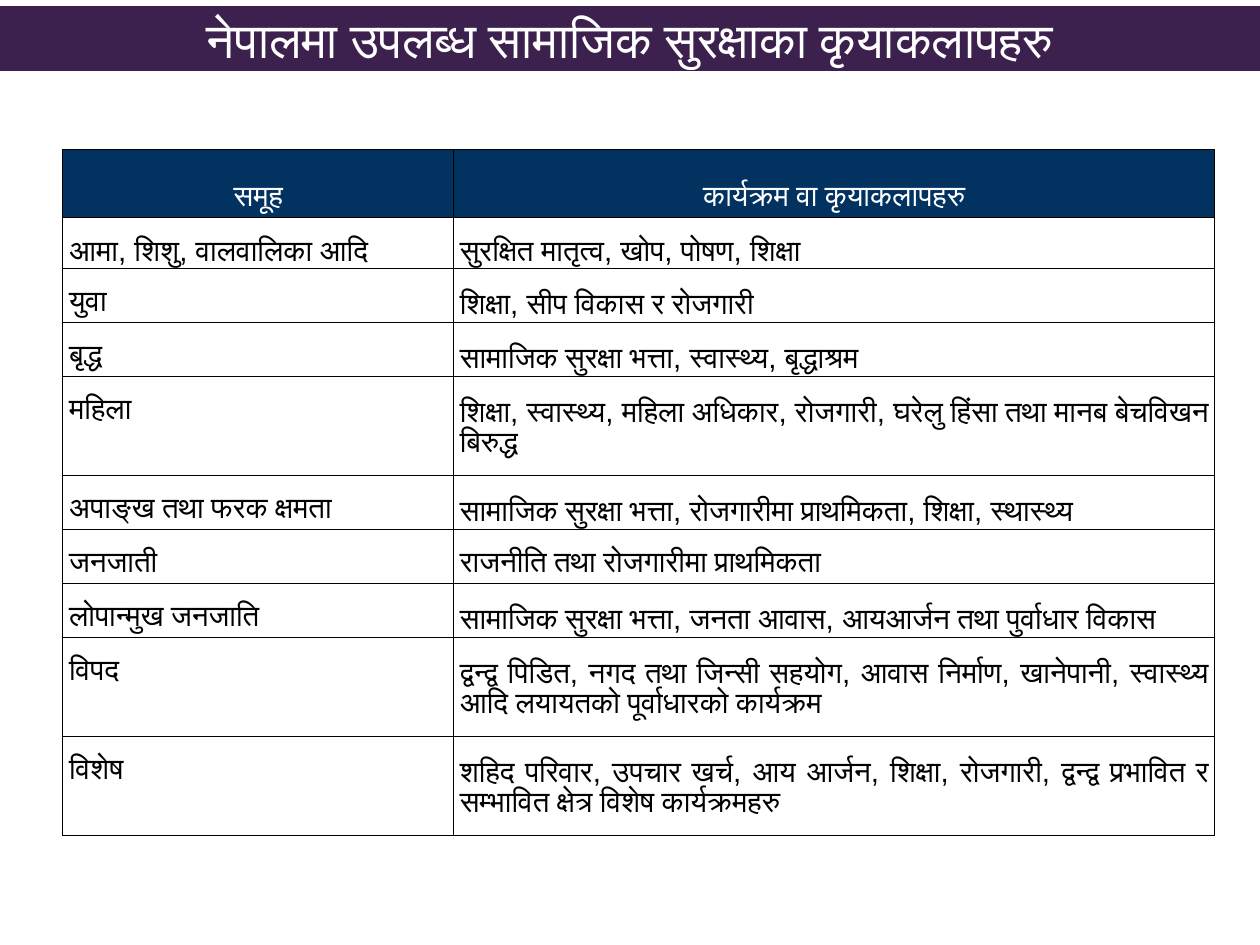
from pptx import Presentation
from pptx.dml.color import RGBColor
from pptx.enum.shapes import MSO_SHAPE
from pptx.enum.text import MSO_ANCHOR, PP_ALIGN
from pptx.oxml import parse_xml
from pptx.oxml.ns import nsdecls
from pptx.util import Inches, Pt

TITLE = "नेपालमा उपलब्ध सामाजिक सुरक्षाका कृयाकलापहरु"
HEADER = ("समूह", "कार्यक्रम वा कृयाकलापहरु")
PROGRAMS = [
    ("आमा, शिशु, वालवालिका आदि", "सुरक्षित मातृत्व, खोप, पोषण, शिक्षा"),
    ("युवा", "शिक्षा, सीप विकास र रोजगारी"),
    ("बृद्ध", "सामाजिक सुरक्षा भत्ता, स्वास्थ्य, बृद्धाश्रम"),
    ("महिला", "शिक्षा, स्वास्थ्य, महिला अधिकार, रोजगारी, घरेलु हिंसा तथा मानब बेचविखन बिरुद्ध"),
    ("अपाङ्ख तथा फरक क्षमता", "सामाजिक सुरक्षा भत्ता, रोजगारीमा प्राथमिकता, शिक्षा, स्थास्थ्य"),
    ("जनजाती", "राजनीति तथा रोजगारीमा प्राथमिकता"),
    ("लोपान्मुख जनजाति", "सामाजिक सुरक्षा भत्ता, जनता आवास, आयआर्जन तथा पुर्वाधार विकास"),
    ("विपद", "द्वन्द्व पिडित, नगद तथा जिन्सी सहयोग, आवास निर्माण, खानेपानी, स्वास्थ्य आदि लयायतको पूर्वाधारको कार्यक्रम"),
    ("विशेष", "शहिद परिवार, उपचार खर्च, आय आर्जन, शिक्षा, रोजगारी, द्वन्द्व प्रभावित र सम्भावित क्षेत्र विशेष कार्यक्रमहरु"),
]
COLUMN_WIDTHS = (4.41, 8.59)
HEADER_ROW, FIRST_ROW, SINGLE_ROW, DOUBLE_ROW = 0.77, 0.57, 0.61, 1.12
HEADER_TOP, FIRST_TOP, BODY_TOP = 0.38, 0.19, 0.22
TWO_LINE_LENGTH = 70


def color(value):
    return RGBColor.from_string(value)


def write(p, text, size, value, align):
    p.text = text
    p.alignment = align
    p.font.name = "Arial"
    p.font.size = Pt(size)
    p.font.color.rgb = color(value)


def add_borders(cell):
    tcPr = cell._tc.get_or_add_tcPr()
    for i, side in enumerate(("lnL", "lnR", "lnT", "lnB")):
        tcPr.insert(i, parse_xml(
            f'<a:{side} {nsdecls("a")} w="{Pt(1)}"><a:solidFill>'
            f'<a:srgbClr val="000000"/></a:solidFill></a:{side}>'))


def row_layout(i, row):
    if i == 0:
        return HEADER_ROW, HEADER_TOP
    if i == 1:
        return FIRST_ROW, FIRST_TOP
    return (DOUBLE_ROW if len(row[1]) > TWO_LINE_LENGTH else SINGLE_ROW), BODY_TOP


def add_title(slide):
    sp = slide.shapes.add_shape(MSO_SHAPE.RECTANGLE, 0, Inches(0.07),
                                Inches(14.22), Inches(0.73))
    sp.shadow.inherit = False
    sp.fill.solid()
    sp.fill.fore_color.rgb = color("3C204E")
    sp.line.fill.background()
    tf = sp.text_frame
    tf.word_wrap = True
    tf.vertical_anchor = MSO_ANCHOR.MIDDLE
    tf.margin_left = tf.margin_right = tf.margin_top = tf.margin_bottom = Inches(0.03)
    write(tf.paragraphs[0], TITLE, 40, "FFFFFF", PP_ALIGN.CENTER)


def add_programs(slide):
    rows = [HEADER] + PROGRAMS
    layouts = [row_layout(i, row) for i, row in enumerate(rows)]
    height = sum(h for h, top in layouts)
    table = slide.shapes.add_table(
        len(rows), len(HEADER), Inches(0.71), Inches(1.69),
        Inches(sum(COLUMN_WIDTHS)), Inches(height)).table
    table.first_row = table.horz_banding = False
    for column, width in zip(table.columns, COLUMN_WIDTHS):
        column.width = Inches(width)
    for i, (row, (row_height, top)) in enumerate(zip(rows, layouts)):
        table.rows[i].height = Inches(row_height)
        for j, text in enumerate(row):
            cell = table.cell(i, j)
            cell.margin_left = cell.margin_right = Inches(0.07)
            cell.margin_top, cell.margin_bottom = Inches(top), 0
            p = cell.text_frame.paragraphs[0]
            if i == 0:
                cell.fill.solid()
                cell.fill.fore_color.rgb = color("013260")
                write(p, text, 24, "FFFFFF", PP_ALIGN.CENTER)
            else:
                cell.fill.background()
                write(p, text, 24, "000000", PP_ALIGN.JUSTIFY)
            add_borders(cell)


def main():
    prs = Presentation()
    prs.slide_width, prs.slide_height = Inches(14.22), Inches(10.67)
    slide = prs.slides.add_slide(prs.slide_layouts[6])
    add_title(slide)
    add_programs(slide)
    prs.save("out.pptx")


if __name__ == "__main__":
    main()
